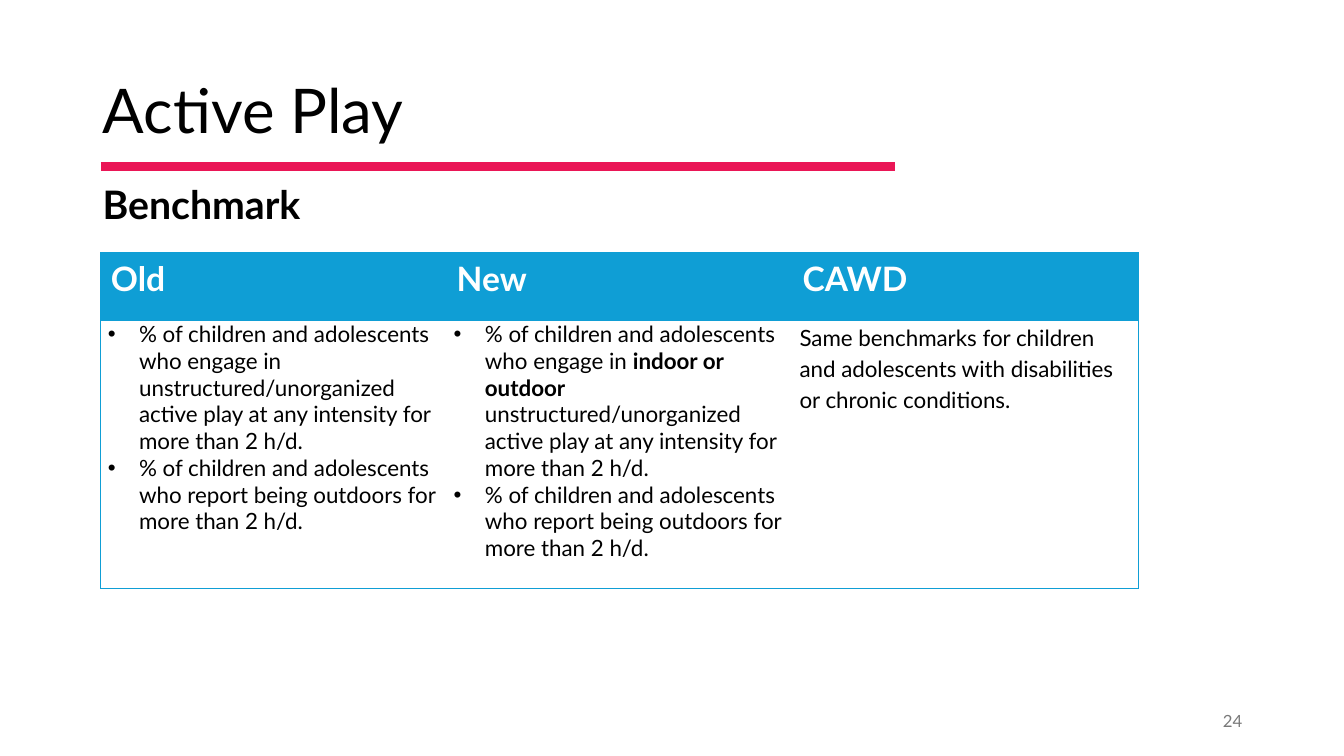
import pptx
import pptx.util
import pptx.dml.color
import pptx.enum.shapes
import pptx.enum.text
import pptx.oxml
import pptx.oxml.ns
import lxml.etree

Inches = pptx.util.Inches
Pt = pptx.util.Pt
Color = pptx.dml.color.RGBColor
Align = pptx.enum.text.PP_ALIGN
Anchor = pptx.enum.text.MSO_ANCHOR
qn = pptx.oxml.ns.qn

BLACK = Color(0x00, 0x00, 0x00)
WHITE = Color(0xFF, 0xFF, 0xFF)
GRAY = Color(0x79, 0x79, 0x79)
BLUE = Color(0x0F, 0x9E, 0xD5)
PINK = Color(0xEA, 0x16, 0x56)

LEFT = 0.92
EDGE = 1
COL = 3.43
ROWS = [0.67, 2.66]


def style(para, size, color, bold=None):
    font = para.font
    font.name = "Lato"
    font.size = Pt(size)
    font.color.rgb = color
    font.bold = bold


def border(cell, side, shown):
    props = cell._tc.get_or_add_tcPr()
    line = lxml.etree.SubElement(props, qn("a:ln" + side), w=str(Pt(1)))
    if shown:
        fill = lxml.etree.SubElement(line, qn("a:solidFill"))
        lxml.etree.SubElement(fill, qn("a:srgbClr"), val=str(BLUE))
    else:
        lxml.etree.SubElement(line, qn("a:noFill"))


deck = pptx.Presentation()
deck.slide_width = Inches(13.33)
deck.slide_height = Inches(7.5)
slide = deck.slides.add_slide(deck.slide_layouts[5])
shapes = slide.shapes

title = shapes.title
title.left, title.top = Inches(LEFT), Inches(0.4)
title.width, title.height = Inches(11.5), Inches(1.45)
title.text_frame.text = "Active Play"
title.text_frame.vertical_anchor = Anchor.MIDDLE
head = title.text_frame.paragraphs[0]
head.alignment = Align.LEFT
head.line_spacing = 0.9
style(head, 44, BLACK)

rule = shapes.add_connector(
    pptx.enum.shapes.MSO_CONNECTOR.STRAIGHT,
    Inches(EDGE), Inches(1.65), Inches(8.88), Inches(1.65))
rule.line.color.rgb = PINK
rule.line.width = Pt(6)
lxml.etree.SubElement(rule._element.spPr, qn("a:effectLst"))

labels = [
    ("Benchmark", LEFT, 1.74, 2.81, 0.57, 28, BLACK, True, Align.LEFT, Anchor.TOP),
    ("24", 9.42, 6.95, 3, 0.4, 12, GRAY, None, Align.RIGHT, Anchor.MIDDLE),
]
for text, x, y, wide, high, size, color, bold, align, anchor in labels:
    frame = shapes.add_textbox(
        Inches(x), Inches(y), Inches(wide), Inches(high)).text_frame
    frame.word_wrap = True
    frame.vertical_anchor = anchor
    frame.text = text
    frame.paragraphs[0].alignment = align
    style(frame.paragraphs[0], size, color, bold)

START = "% of children and adolescents who engage in "
REST = "unstructured/unorganized active play at any intensity for more than 2 h/d."
OUT = "% of children and adolescents who report being outdoors for more than 2 h/d."
SAME = ("Same benchmarks for children and adolescents with disabilities "
        "or chronic conditions.")
heads = ["Old", "New", "CAWD"]
bodies = [
    [[START + REST], [OUT]],
    [[START, "indoor or outdoor ", REST], [OUT]],
    [[SAME]],
]

table = shapes.add_table(
    len(ROWS), len(heads), Inches(EDGE), Inches(2.51),
    Inches(COL * len(heads)), Inches(sum(ROWS))).table
for row, high in zip(table.rows, ROWS):
    row.height = Inches(high)

last = len(heads) - 1
for col, (name, body) in enumerate(zip(heads, bodies)):
    table.columns[col].width = Inches(COL)
    top, cell = table.cell(0, col), table.cell(1, col)
    for row, box in enumerate([top, cell]):
        border(box, "L", col == 0)
        border(box, "R", col == last)
        border(box, "T", True)
        border(box, "B", True)
        box.fill.solid()
        box.fill.fore_color.rgb = WHITE if row else BLUE

    top.text = name
    style(top.text_frame.paragraphs[0], 24, WHITE, True)

    cell.margin_left = cell.margin_right = Inches(0.07)
    cell.margin_top = cell.margin_bottom = 0
    frame = cell.text_frame
    for num, parts in enumerate(body):
        para = frame.add_paragraph() if num else frame.paragraphs[0]
        if col < last:
            props = para._p.get_or_add_pPr()
            props.set("marL", str(Inches(0.31)))
            props.set("indent", str(-Inches(0.31)))
            lxml.etree.SubElement(props, qn("a:buFont"), typeface="Arial")
            lxml.etree.SubElement(props, qn("a:buChar"), char="•")
        else:
            para.line_spacing = 1.16
            para.space_after = Pt(8)
        style(para, 16, BLACK)
        for spot, part in enumerate(parts):
            run = para.add_run()
            run.text = part
            if spot == 1:
                run.font.bold = True

deck.save("out.pptx")
